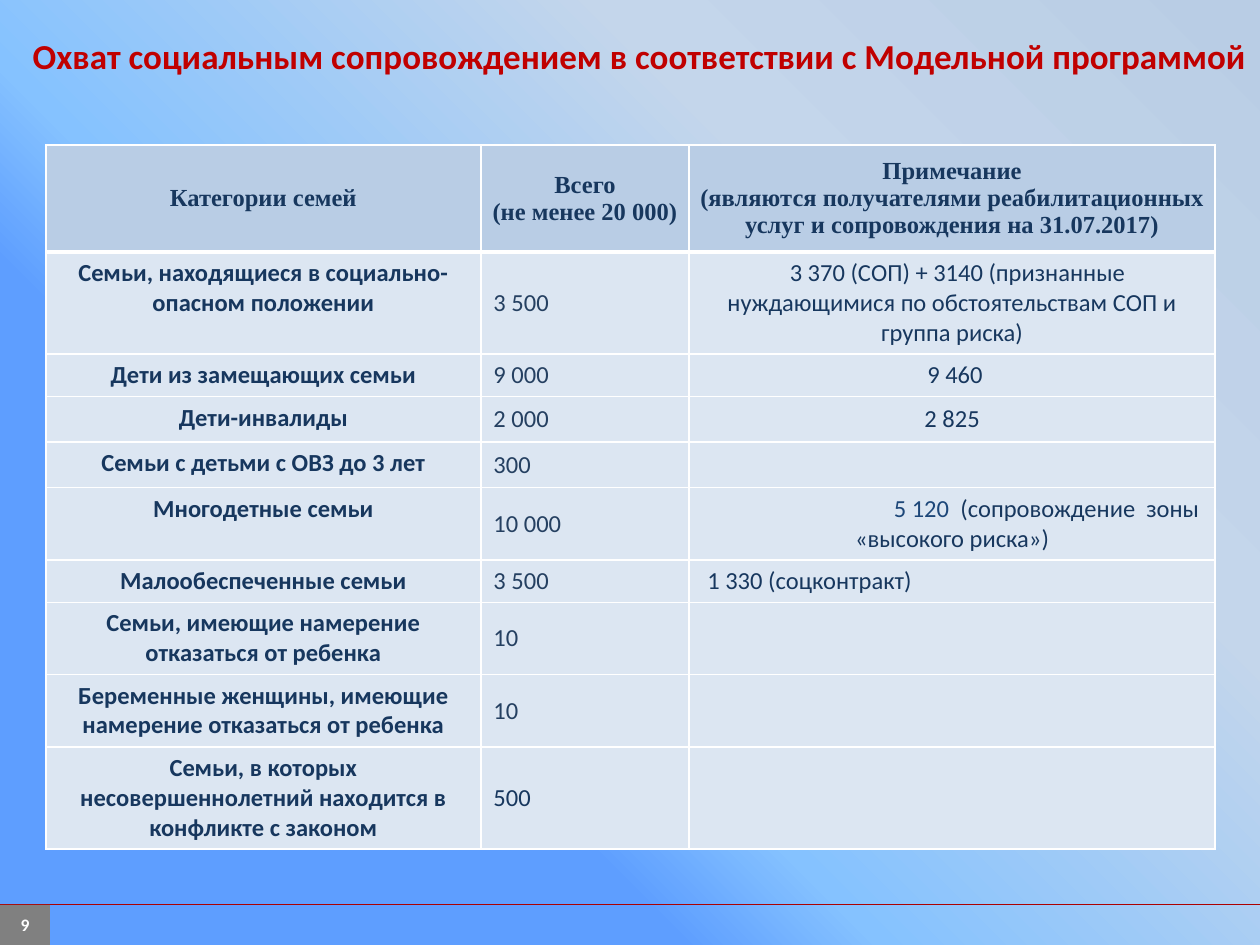
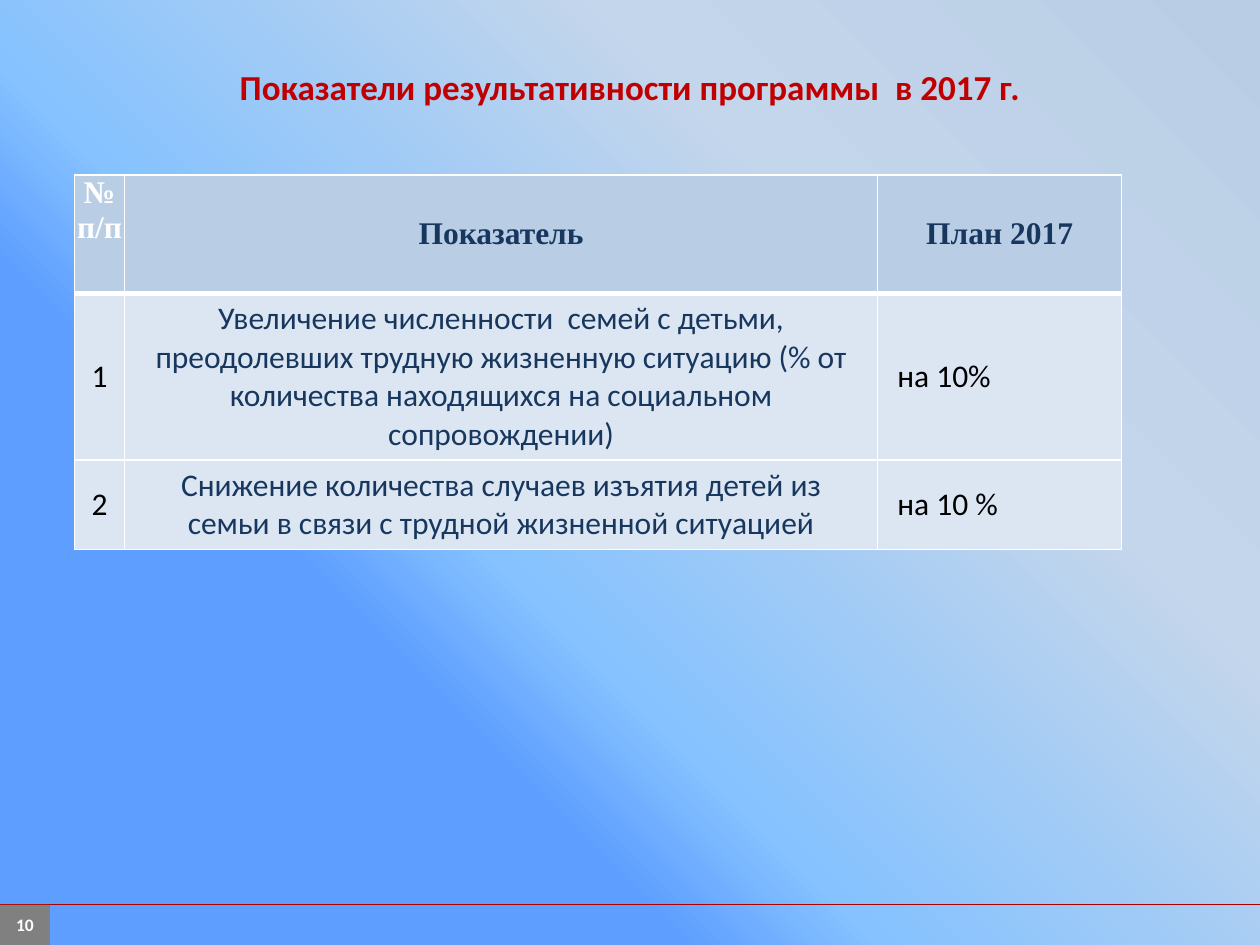
from dataclasses import dataclass, replace
from lxml.etree import SubElement
from pptx import Presentation
from pptx.dml.color import RGBColor
from pptx.enum.shapes import MSO_CONNECTOR, MSO_SHAPE
from pptx.enum.text import MSO_ANCHOR, MSO_AUTO_SIZE, PP_ALIGN
from pptx.oxml.ns import qn
from pptx.util import Pt

# Colours
RED = RGBColor(0xC0, 0x00, 0x00)
RULE = RGBColor(0xAC, 0x00, 0x00)
NAVY = RGBColor(0x17, 0x37, 0x5E)
DUSK = RGBColor(0x25, 0x40, 0x61)
AZURE = RGBColor(0x1D, 0x47, 0x79)
HEAD = RGBColor(0xB9, 0xCD, 0xE5)
PALE = RGBColor(0xDC, 0xE6, 0xF2)
GREY = RGBColor(0x80, 0x80, 0x80)
WHITE = RGBColor(0xFF, 0xFF, 0xFF)
BLACK = RGBColor(0x00, 0x00, 0x00)
SKY = [(31, RGBColor(0x5E, 0x9E, 0xFF)), (40, RGBColor(0x85, 0xC2, 0xFF)),
       (70, RGBColor(0xC4, 0xD6, 0xEB)), (100, HEAD)]

WIDE, HIGH = 720, 540
FOOT = 517


@dataclass
class Look:
    size: float = 14
    font: str = "Calibri"
    color: RGBColor = NAVY
    bold: bool = False
    align: PP_ALIGN = PP_ALIGN.CENTER
    anchor: MSO_ANCHOR = MSO_ANCHOR.MIDDLE
    pad: tuple = (7.2, 3.6)
    indent: float = 0


class Deck:
    def __init__(self):
        self.prs = Presentation()
        self.prs.slide_width, self.prs.slide_height = Pt(WIDE), Pt(HIGH)
        self.slide = None
        self.paint()

    def paint(self):
        """Give the master its diagonal gradient."""
        master = self.prs.slide_master
        fill = master.background.fill
        fill.gradient()
        fill.gradient_angle = 45
        stops = next(master.element.iter(qn("a:gsLst")))
        for old in list(stops):
            stops.remove(old)
        for pos, color in SKY:
            stop = SubElement(stops, qn("a:gs"), pos=str(pos * 1000))
            SubElement(stop, qn("a:srgbClr"), val=str(color))

    def page(self, title, left, top, number):
        self.slide = self.prs.slides.add_slide(self.prs.slide_layouts[5])
        self.title(title, left, top)
        self.footer(number)

    def text(self, frame, text, look):
        """Text is a string, or a list of (string, colour) runs."""
        lines = ([[(line, look.color)] for line in text.split("\n")]
                 if isinstance(text, str) else [text])
        for i, runs in enumerate(lines):
            para = frame.add_paragraph() if i else frame.paragraphs[0]
            para.alignment = look.align
            if look.indent:
                props = para._p.get_or_add_pPr()
                props.set("marL", "0")
                props.set("indent", str(Pt(look.indent)))
            for words, color in runs:
                run = para.add_run()
                run.text = words
                font = run.font
                font.size, font.name = Pt(look.size), look.font
                font.bold, font.color.rgb = look.bold, color

    def pad(self, box, side, edge):
        box.margin_left = box.margin_right = Pt(side)
        box.margin_top = box.margin_bottom = Pt(edge)

    def title(self, text, left, top):
        shape = self.slide.shapes.title
        shape.left, shape.top = Pt(left), Pt(top)
        shape.width, shape.height = Pt(708), Pt(31.7)
        frame = shape.text_frame
        frame.word_wrap, frame.auto_size = True, MSO_AUTO_SIZE.NONE
        frame.vertical_anchor = MSO_ANCHOR.TOP
        self.pad(frame, 0, 3.6)
        self.text(frame, text, Look(size=20, color=RED, bold=True))

    def footer(self, number):
        shapes = self.slide.shapes
        line = shapes.add_connector(
            MSO_CONNECTOR.STRAIGHT, Pt(0), Pt(FOOT), Pt(WIDE), Pt(FOOT))
        line.line.color.rgb, line.line.width = RULE, Pt(0.75)
        SubElement(line._element.spPr, qn("a:effectLst"))
        box = shapes.add_shape(
            MSO_SHAPE.RECTANGLE, Pt(0), Pt(FOOT), Pt(28.5), Pt(HIGH - FOOT))
        box.shadow.inherit = False
        box.fill.solid()
        box.fill.fore_color.rgb = GREY
        box.line.fill.background()
        frame = box.text_frame
        frame.vertical_anchor = MSO_ANCHOR.MIDDLE
        self.pad(frame, 5, 2.9)
        self.text(frame, str(number), Look(size=10, color=WHITE, bold=True))

    def border(self, cell, top, bottom):
        props = cell._tc.get_or_add_tcPr()
        for side, width in zip("LRTB", (1, 1, top, bottom)):
            line = SubElement(props, qn(f"a:ln{side}"), w=str(Pt(width)))
            fill = SubElement(line, qn("a:solidFill"))
            SubElement(fill, qn("a:srgbClr"), val=str(WHITE))

    def table(self, left, top, cols, highs, rows, pick):
        """pick(row, column) gives the look of each cell."""
        grid = self.slide.shapes.add_table(
            len(rows), len(cols), Pt(left), Pt(top),
            Pt(sum(cols)), Pt(sum(highs))).table
        for col, width in zip(grid.columns, cols):
            col.width = Pt(width)
        for row, high in zip(grid.rows, highs):
            row.height = Pt(high)
        for r, row in enumerate(rows):
            for c, text in enumerate(row):
                cell, look = grid.cell(r, c), pick(r, c)
                self.border(cell, 3 if r == 1 else 1, 1 if r else 3)
                cell.fill.solid()
                cell.fill.fore_color.rgb = PALE if r else HEAD
                cell.vertical_anchor = look.anchor
                self.pad(cell, *(look.pad if text else (0, 0)))
                if text:
                    self.text(cell.text_frame, text, look)


# Looks shared by both tables
TIGHT = (0.72, 0)
TOP = Look(font="Times New Roman", bold=True, pad=TIGHT)
NAME = Look(bold=True, anchor=MSO_ANCHOR.TOP)
COUNT = Look(color=DUSK, align=PP_ALIGN.LEFT)
NOTE = Look()

# Families covered
FAMILY = [
    ("Категории семей", "Всего\n(не менее 20 000)",
     "Примечание\n(являются получателями реабилитационных услуг "
     "и сопровождения на 31.07.2017)"),
    ("Семьи, находящиеся в социально-опасном положении", "3 500",
     "3 370 (СОП) + 3140 (признанные нуждающимися по обстоятельствам СОП "
     "и группа риска)"),
    ("Дети из замещающих семьи", "9 000", "9 460"),
    ("Дети-инвалиды", "2 000", "2 825"),
    ("Семьи с детьми с ОВЗ до 3 лет", "300", ""),
    ("Многодетные семьи", "10 000",
     [("5 120  ", AZURE), ("(сопровождение  зоны «высокого риска»)", NAVY)]),
    ("Малообеспеченные семьи", "3 500", "1 330 (соцконтракт)"),
    ("Семьи, имеющие намерение отказаться от ребенка", "10", ""),
    ("Беременные женщины, имеющие намерение отказаться от ребенка", "10", ""),
    ("Семьи, в которых несовершеннолетний находится в конфликте с законом",
     "500", ""),
]
FAMILY_LOOKS = {
    (1, 2): replace(NOTE, indent=6.3),
    (2, 2): replace(NOTE, indent=3.2),
    (5, 2): replace(NOTE, indent=108),
    (6, 2): replace(NOTE, indent=3.2, align=PP_ALIGN.LEFT),
    (9, 1): replace(COUNT, color=NAVY),
}

# Goals of the programme
GOALS = [
    ("№\nп/п", "Показатель", "План 2017"),
    ("1", "Увеличение численности  семей с детьми, преодолевших трудную "
     "жизненную ситуацию (% от количества находящихся на социальном "
     "сопровождении)", "на 10%"),
    ("2", "Снижение количества случаев изъятия детей из семьи в связи "
     "с трудной жизненной ситуацией", "на 10 %"),
]
GOAL_LOOKS = [
    Look(color=BLACK, pad=TIGHT),
    Look(anchor=MSO_ANCHOR.TOP),
    Look(color=BLACK, align=PP_ALIGN.LEFT, indent=4),
]


def family_look(r, c):
    return FAMILY_LOOKS.get((r, c), (NAME, COUNT, NOTE)[c] if r else TOP)


def goal_look(r, c):
    look = replace(GOAL_LOOKS[c] if r else TOP, size=18)
    if r == c == 0:
        look = replace(look, color=WHITE, anchor=MSO_ANCHOR.TOP)
    return look


def main():
    deck = Deck()

    # Coverage slide
    deck.page("Охват социальным сопровождением в соответствии "
              "с Модельной программой", 11.5, 15.84, 9)
    one, two, three = 24, 40.7, 57.7
    deck.table(26.2, 82.8, (248.6, 119, 300.6),
               (61.2, three, one, 26, 26, two, one, two, two, three),
               FAMILY, family_look)

    # Results slide
    deck.page("Показатели результативности программы  в 2017 г.",
              6, 33.84, 10)
    deck.table(42.6, 100, (28.6, 430.4, 139.4), (67.7, 93.7, 50.3),
               GOALS, goal_look)

    deck.prs.save("out.pptx")


if __name__ == "__main__":
    main()
